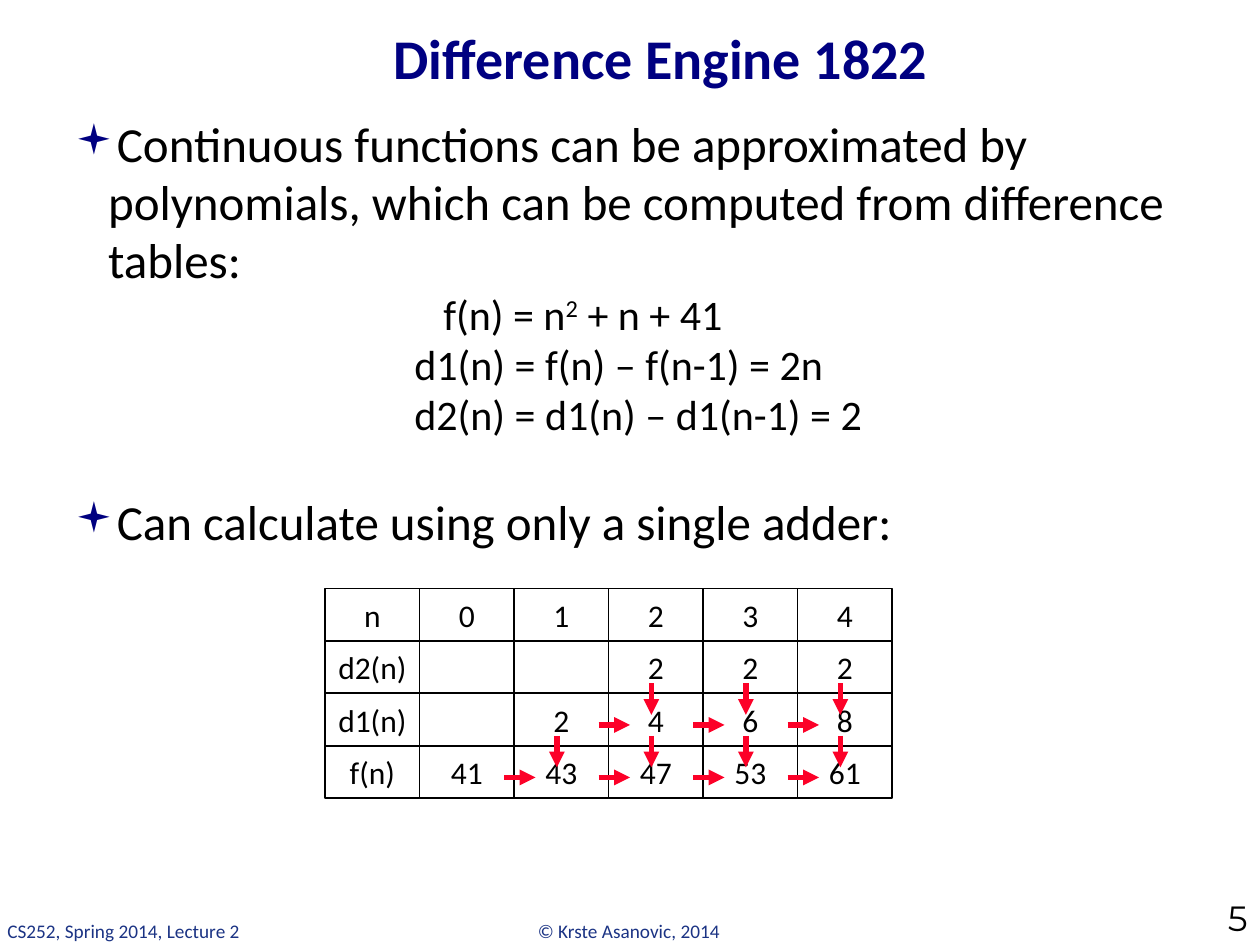
from lxml import etree
from pptx import Presentation
from pptx.dml.color import RGBColor
from pptx.enum.shapes import MSO_CONNECTOR, MSO_SHAPE
from pptx.enum.text import MSO_ANCHOR, MSO_AUTO_SIZE, PP_ALIGN
from pptx.oxml.ns import qn
from pptx.util import Inches, Pt

STRAIGHT = MSO_CONNECTOR.STRAIGHT
RECTANGLE = MSO_SHAPE.RECTANGLE
TOP, MIDDLE, BOTTOM = MSO_ANCHOR.TOP, MSO_ANCHOR.MIDDLE, MSO_ANCHOR.BOTTOM
LEFT, CENTER, RIGHT = PP_ALIGN.LEFT, PP_ALIGN.CENTER, PP_ALIGN.RIGHT
NO_AUTOFIT = MSO_AUTO_SIZE.NONE

NAVY = RGBColor(0x00, 0x00, 0x81)
FOOTER_BLUE = RGBColor(0x1B, 0x33, 0x84)
RED = RGBColor(0xFC, 0x01, 0x28)
BLACK = RGBColor(0x00, 0x00, 0x00)
WHITE = RGBColor(0xFF, 0xFF, 0xFF)


def format_runs(paragraph, size, color=BLACK, font="Calibri", align=LEFT):
    paragraph.alignment = align
    for run in paragraph.runs:
        run.font.size = Pt(size)
        run.font.name = font
        run.font.color.rgb = color


def add_arrow(slide, start_x, start_y, end_x, end_y):
    arrow = slide.shapes.add_connector(
        STRAIGHT, Inches(start_x), Inches(start_y), Inches(end_x), Inches(end_y))
    arrow.line.color.rgb = RED
    arrow.line.width = Pt(3)
    line = arrow.line._get_or_add_ln()
    etree.SubElement(line, qn("a:tailEnd"), type="triangle")
    etree.SubElement(arrow._element.spPr, qn("a:effectLst"))


presentation = Presentation()
presentation.slide_width = Inches(10)
presentation.slide_height = Inches(7.5)
slide = presentation.slides.add_slide(presentation.slide_layouts[5])

title = slide.shapes.title
title.left, title.top = Inches(1.33), Inches(0.08)
title.width, title.height = Inches(7.83), Inches(0.75)
title.text_frame.text = "Difference Engine 1822"
title.text_frame.auto_size = NO_AUTOFIT
title.text_frame.vertical_anchor = MIDDLE
format_runs(title.text_frame.paragraphs[0], 32, NAVY, align=CENTER)
title.text_frame.paragraphs[0].runs[0].font.bold = True

labels = [
    ("© Krste Asanovic, 2014", 4.17, 7.25, 1.67, 0.29, 11, FOOTER_BLUE, "Calibri", LEFT, TOP),
    ("CS252, Spring 2014, Lecture 2", -0.04, 7.25, 2.06, 0.29, 11, FOOTER_BLUE, "Calibri", LEFT, TOP),
    ("5", 9.08, 7.24, 0.92, 0.26, 20, BLACK, "Montserrat", RIGHT, BOTTOM),
]
for text, left, top, width, height, size, color, font, align, anchor in labels:
    label = slide.shapes.add_textbox(Inches(left), Inches(top), Inches(width), Inches(height))
    label.text_frame.text = text
    label.text_frame.word_wrap = align == RIGHT
    label.text_frame.vertical_anchor = anchor
    format_runs(label.text_frame.paragraphs[0], size, color, font, align)

body = slide.shapes.add_textbox(Inches(0.5), Inches(0.83), Inches(9.09), Inches(3.58))
body.text_frame.word_wrap = True
body.text_frame.margin_top = Inches(0.09)
body_lines = [
    (["Continuous functions can be approximated by polynomials, "
      "which can be computed from difference tables:"], 28, 0.26, -0.26, 0),
    (["f(n) = n", "2", " + n + 41"], 24, 0.5, 2.42, 0),
    (["d1(n) = f(n) – f(n-1) = 2n"], 24, 0.5, 2.19, 0),
    (["d2(n) = d1(n) – d1(n-1) = 2"], 24, 0.5, 2.19, 0),
    (["Can calculate using only a single adder:"], 28, 0.25, -0.25, 30.5),
]
for index, (texts, size, margin, indent, space) in enumerate(body_lines):
    paragraph = body.text_frame.paragraphs[0] if index == 0 else body.text_frame.add_paragraph()
    for text in texts:
        paragraph.add_run().text = text
    format_runs(paragraph, size)
    paragraph.line_spacing = 0.99
    paragraph.space_before = Pt(space)
    properties = paragraph._p.get_or_add_pPr()
    properties.set("marL", str(Inches(margin)))
    properties.set("indent", str(Inches(indent)))
    if indent < 0:
        bullet_color = etree.SubElement(properties, qn("a:buClr"))
        etree.SubElement(bullet_color, qn("a:srgbClr"), val="000080")
        etree.SubElement(properties, qn("a:buSzPct"), val="85000")
        etree.SubElement(properties, qn("a:buFont"), typeface="Wingdings")
        etree.SubElement(properties, qn("a:buChar"), char="▪")
exponent = body.text_frame.paragraphs[1].runs[1]
exponent.font._element.set("baseline", "30000")

difference_rows = [
    ["n", "0", "1", "2", "3", "4"],
    ["d2(n)", "", "", "2", "2", "2"],
    ["d1(n)", "", "2", "4", "6", "8"],
    ["f(n)", "41", "43", "47", "53", "61"],
]
grid_left, grid_top = 2.58, 4.67
column_width, row_height = 0.75, 1.25 / 3
for row_index, values in enumerate(difference_rows):
    for column_index, value in enumerate(values):
        cell = slide.shapes.add_shape(
            RECTANGLE,
            Inches(grid_left + column_index * column_width),
            Inches(grid_top + row_index * row_height),
            Inches(column_width), Inches(row_height))
        cell.shadow.inherit = False
        cell.fill.solid()
        cell.fill.fore_color.rgb = WHITE
        cell.line.color.rgb = BLACK
        cell.line.width = Pt(1)
        if value:
            frame = cell.text_frame
            frame.text = value
            frame.word_wrap = False
            frame.vertical_anchor = MIDDLE
            format_runs(frame.paragraphs[0], 18, align=CENTER)

for row_index, first_column in ((2, 3), (3, 2)):
    for column_index in range(first_column, len(difference_rows[0])):
        cell_left = grid_left + column_index * column_width
        cell_top = grid_top + row_index * row_height
        add_arrow(slide, cell_left + 0.34, cell_top - 0.08, cell_left + 0.34, cell_top + 0.17)
        add_arrow(slide, cell_left - 0.08, cell_top + 0.25, cell_left + 0.17, cell_top + 0.25)

presentation.save("out.pptx")
